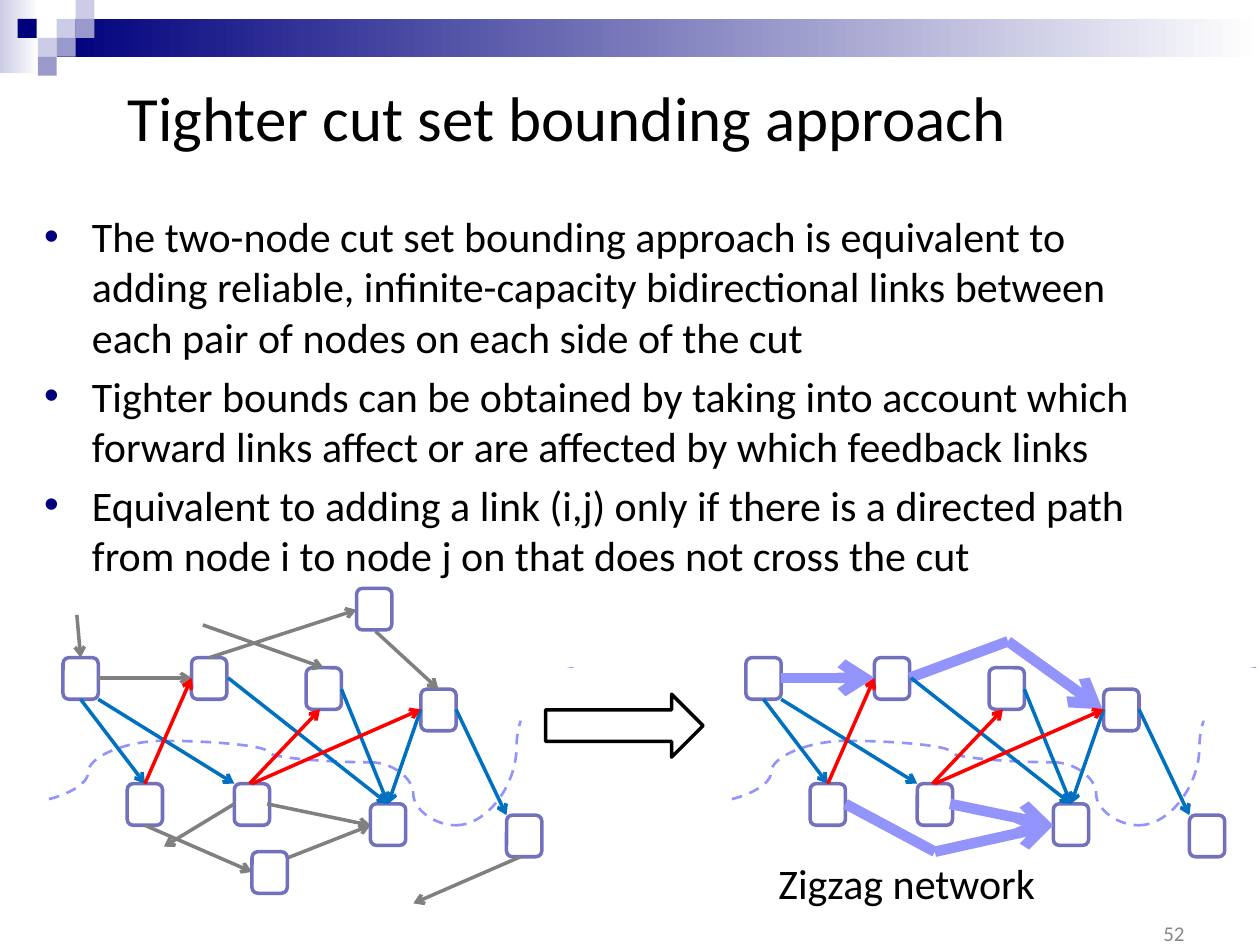
"""Build the slide on tighter cut set bounds with a cut network and its zigzag network."""
from dataclasses import dataclass

from lxml import etree
from pptx import Presentation
from pptx.dml.color import RGBColor
from pptx.enum import dml, shapes, text
from pptx.oxml import ns
from pptx.util import Inches, Pt


@dataclass(frozen=True)
class Theme:
    font: str = "Calibri"
    ink: str = "000000"
    paper: str = "FFFFFF"
    navy: str = "00007D"
    mid: str = "9999CC"
    pale: str = "CCCCE6"
    node: str = "7171BD"
    cut: str = "9393FC"
    forward: str = "0070C0"
    feedback: str = "FF0000"
    inner: str = "808080"
    number: str = "898989"
    title_size: float = 36
    body_size: float = 24
    number_size: float = 12
    thin: float = 2
    dashed: float = 1.5
    thick: float = 6


theme = Theme()
rgb = RGBColor.from_string
deck = Presentation()
deck.slide_width, deck.slide_height = Inches(10), Inches(7.5)
slide = deck.slides.add_slide(deck.slide_layouts[1])


def write(holder, *lines, box, size=theme.body_size, color=theme.ink, align=text.PP_ALIGN.LEFT,
          anchor=text.MSO_ANCHOR.TOP, bullet=None):
    holder.left, holder.top, holder.width, holder.height = map(Inches, box)
    frame = holder.text_frame
    frame.word_wrap = True
    frame.auto_size = text.MSO_AUTO_SIZE.NONE
    frame.vertical_anchor = anchor
    frame.text = "\n".join(lines)
    for paragraph in frame.paragraphs:
        paragraph.alignment = align
        font = paragraph.runs[0].font
        font.name, font.size, font.color.rgb = theme.font, Pt(size), rgb(color)
        if bullet:
            paragraph.space_before = Pt(0.2 * size)
            props = paragraph._p.get_or_add_pPr()
            props.set("marL", str(Inches(0.38)))
            props.set("indent", str(-Inches(0.38)))
            tint = etree.SubElement(props, ns.qn("a:buClr"))
            etree.SubElement(tint, ns.qn("a:srgbClr"), val=theme.navy)
            etree.SubElement(props, ns.qn("a:buChar"), char=bullet)


def draw(kind, *place, color, fill=None, fade=None, weight=theme.thin, arrow=False, dash=False):
    if isinstance(kind, shapes.MSO_CONNECTOR):
        part = slide.shapes.add_connector(kind, *map(Inches, place))
        etree.SubElement(part._element.spPr, ns.qn("a:effectLst"))
    else:
        part = slide.shapes.add_shape(kind, *map(Inches, place))
        part.shadow.inherit = False
        if fade:
            part.fill.gradient()
            part.fill.gradient_angle = 0
            for stop, shade in zip(part.fill.gradient_stops, (color, fade)):
                stop.color.rgb = rgb(shade)
        else:
            part.fill.solid()
            part.fill.fore_color.rgb = rgb(fill or color)
        if not fill:
            part.line.fill.background()
            return
    part.line.color.rgb, part.line.width = rgb(color), Pt(weight)
    if dash:
        part.line.dash_style = dml.MSO_LINE.DASH
    if arrow:
        etree.SubElement(part.line._get_or_add_ln(), ns.qn("a:tailEnd"), type="arrow")


RECT = shapes.MSO_SHAPE.RECTANGLE
NODE = shapes.MSO_SHAPE.ROUNDED_RECTANGLE
LINE = shapes.MSO_CONNECTOR.STRAIGHT
CURVE = shapes.MSO_CONNECTOR.CURVE

draw(RECT, 0, 0, 0.31, 0.58, color=theme.pale, fade=theme.paper)
draw(RECT, 0.45, 0.15, 9.55, 0.3, color=theme.navy, fade=theme.paper)
for left, top, shade in [(0.45, 0.15, theme.pale), (0.6, 0, theme.pale), (0.6, 0.15, theme.mid),
                         (0.3, 0.3, theme.pale), (0.14, 0.15, theme.navy),
                         (0.45, 0.3, theme.mid), (0.3, 0.45, theme.mid)]:
    draw(RECT, left, top, 0.15, 0.15, color=shade)

write(slide.shapes.title, "Tighter cut set bounding approach", box=(0, 0.3, 9, 1.25),
      size=theme.title_size, align=text.PP_ALIGN.CENTER, anchor=text.MSO_ANCHOR.MIDDLE)
write(slide.placeholders[1],
      "The two-node cut set bounding approach is equivalent to adding reliable, "
      "infinite-capacity bidirectional links between each pair of nodes on each side of the cut",
      "Tighter bounds can be obtained by taking into account which forward links affect "
      "or are affected by which feedback links",
      "Equivalent to adding a link (i,j) only if there is a directed path from node i "
      "to node j on that does not cross the cut",
      box=(0.25, 1.62, 9, 4.95), bullet="•")

cut_points = [(0.1, 6.38), (1.3, 5.88), (2.94, 6.05), (3.62, 6.55), (4.58, 5.3)]
nodes = [(0.5, 5.22), (1.01, 6.22), (1.52, 5.22), (1.86, 6.22),
         (2.43, 5.3), (3.34, 5.47), (2.94, 6.38), (4.02, 6.47)]
outer_nodes = [(2, 6.76), (2.83, 4.67)]
forward_links = [(0.78, 5.55, 1.86, 6.22), (0.64, 5.55, 1.15, 6.22), (1.81, 5.38, 3.08, 6.38),
                 (2.71, 5.47, 3.08, 6.38), (3.34, 5.63, 3.08, 6.38), (3.62, 5.63, 4.02, 6.47)]
feedback_links = [(1.15, 6.22, 1.52, 5.38), (1.98, 6.22, 2.54, 5.63), (2, 6.22, 3.34, 5.63)]
inner_links = [(0.78, 5.38, 1.52, 5.38), (0.61, 4.88, 0.64, 5.22), (1.61, 4.96, 2.57, 5.3),
               (1.66, 5.22, 2.83, 4.84), (1.86, 6.38, 1.3, 6.72), (2, 6.92, 2.94, 6.55),
               (4.13, 6.8, 3.28, 7.17), (2.98, 5.01, 3.48, 5.47), (2.12, 6.38, 2.94, 6.55),
               (1.15, 6.55, 2, 6.92)]
path_links = [(6.2, 5.38, 6.94, 5.38, True), (7.22, 5.38, 8, 5.09, False),
              (7.42, 6.76, 8.36, 6.55, True), (8, 5.09, 8.75, 5.63, True),
              (7.54, 6.38, 8.36, 6.55, True), (6.71, 6.38, 7.42, 6.76, False)]

for shift, cover_left, cover_width in [(0, 0, 0.34), (5.42, 4.5, 1.26)]:
    for (x1, y1), (x2, y2) in zip(cut_points, cut_points[1:]):
        draw(CURVE, x1 + shift, y1, x2 + shift, y2, color=theme.cut, weight=theme.dashed, dash=True)
    draw(RECT, cover_left, 5.47, cover_width, 1.21, color=theme.paper)
    draw(RECT, 4.01 + shift, 5.3, 0.57, 0.42, color=theme.paper)
    for left, top in nodes:
        draw(NODE, left + shift, top, 0.28, 0.33, color=theme.node, fill=theme.paper)
    if shift:
        for *ends, arrow in path_links:
            draw(LINE, *ends, color=theme.cut, weight=theme.thick, arrow=arrow)
    else:
        for ends in inner_links:
            draw(LINE, *ends, color=theme.inner, arrow=True)
        for left, top in outer_nodes:
            draw(NODE, left, top, 0.28, 0.33, color=theme.node, fill=theme.paper)
    for links, shade in [(forward_links, theme.forward), (feedback_links, theme.feedback)]:
        for x1, y1, x2, y2 in links:
            draw(LINE, x1 + shift, y1, x2 + shift, y2, color=shade, arrow=True)

draw(shapes.MSO_SHAPE.RIGHT_ARROW, 4.33, 5.51, 1.25, 0.5, color=theme.ink, fill=theme.paper)
write(slide.shapes.add_textbox(0, 0, 0, 0), "Zigzag network", box=(6.08, 6.76, 2.67, 0.51))
write(slide.shapes.add_textbox(0, 0, 0, 0), "52", box=(7.17, 7.21, 2.33, 0.4),
      size=theme.number_size, color=theme.number, align=text.PP_ALIGN.RIGHT,
      anchor=text.MSO_ANCHOR.MIDDLE)

deck.save("out.pptx")
